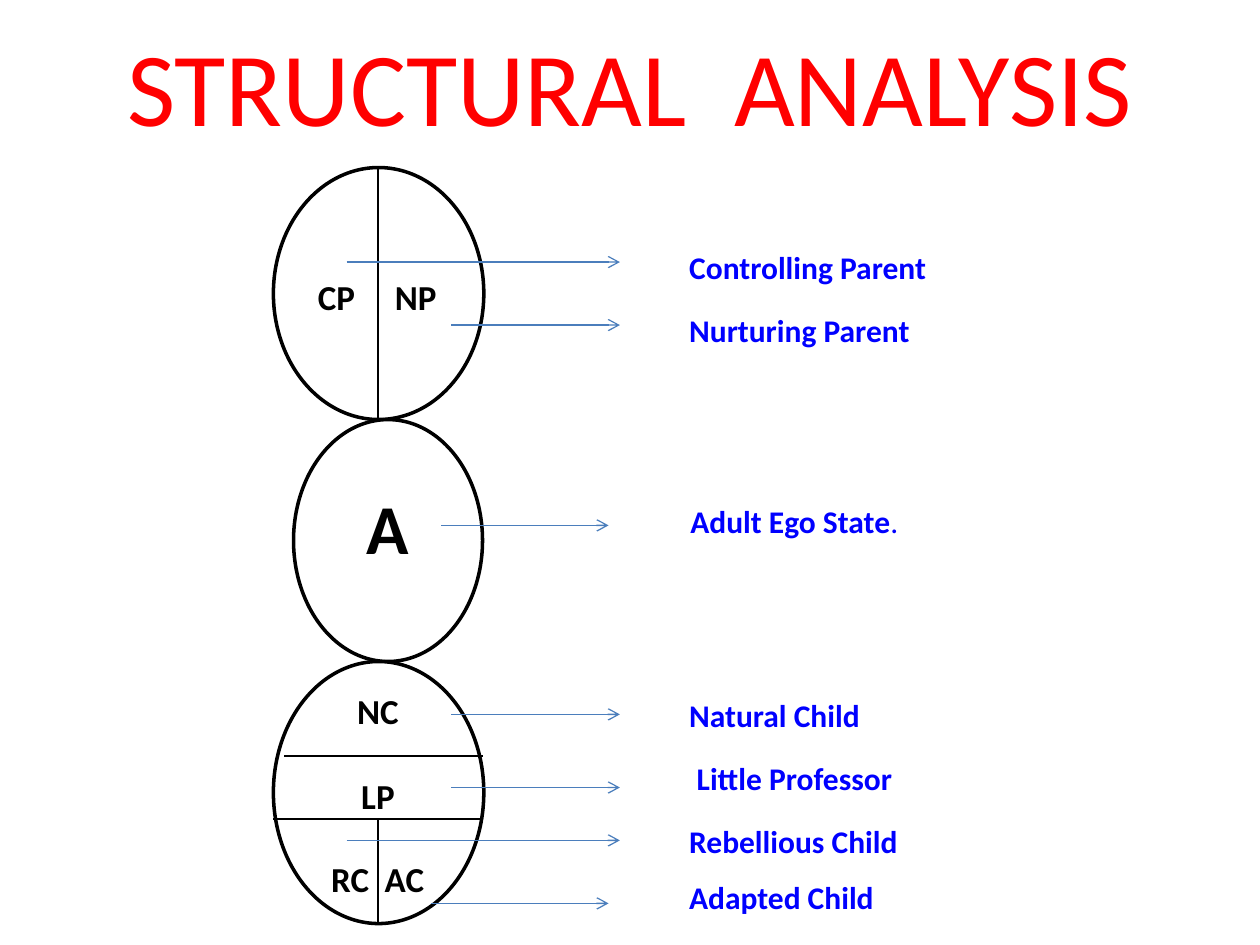
from dataclasses import dataclass

from pptx import Presentation
from pptx.dml.color import RGBColor
from pptx.enum.shapes import MSO_CONNECTOR, MSO_SHAPE
from pptx.enum.text import MSO_ANCHOR, PP_ALIGN
from pptx.oxml.ns import qn
from pptx.util import Inches, Pt
from lxml.etree import SubElement


@dataclass(frozen=True)
class Theme:
    font: str = "Calibri"
    title: str = "FF0000"
    label: str = "0000FF"
    ink: str = "000000"
    paper: str = "FFFFFF"
    arrow: str = "4B7EBC"
    title_size: int = 60
    adult_size: int = 40
    part_size: int = 20
    label_size: int = 18
    outline: float = 2
    thin: float = 0.75


THEME = Theme()

# left, top, width, height
EGO_STATES = [
    (2.17, 1.33, 1.67, 2),
    (2.33, 3.33, 1.5, 1.92),
    (2.17, 5.25, 1.67, 2.08),
]

# x1, y1, x2, y2
DIVIDERS = [
    (3, 1.33, 3, 3.33),
    (3.83, 6, 2.25, 6),
    (3.83, 6.5, 2.17, 6.5),
    (3, 6.5, 3, 7.33),
]

# text, centre x, centre y
PARTS = [
    ("CP", 2.67, 2.35),
    ("NP", 3.3, 2.35),
    ("NC", 3, 5.64),
    ("LP", 3, 6.31),
    ("RC", 2.78, 6.97),
    ("AC", 3.21, 6.97),
]

# text, left, centre y
LABELS = [
    ("Controlling Parent", 5.47, 2.12),
    ("Nurturing Parent", 5.47, 2.62),
    ("Adult Ego State", 5.48, 4.13),
    ("Natural Child", 5.47, 5.67),
    ("Little Professor", 5.53, 6.17),
    ("Rebellious Child", 5.47, 6.67),
    ("Adapted Child", 5.47, 7.12),
]

# start x, end x, y
ARROWS = [
    (2.75, 4.92, 2.08),
    (3.58, 4.92, 2.58),
    (3.5, 4.83, 4.17),
    (3.58, 4.92, 5.67),
    (3.58, 4.92, 6.25),
    (2.75, 4.92, 6.67),
    (3.42, 4.83, 7.17),
]


def rgb(value):
    return RGBColor.from_string(value)


def add_run(p, text, size, color, bold):
    r = p.add_run()
    r.text = text
    r.font.name = THEME.font
    r.font.size = Pt(size)
    r.font.bold = bold
    r.font.color.rgb = rgb(color)


def add_text(slide, text, left, middle, width, height, *, size,
             color=THEME.ink, bold=True, align=PP_ALIGN.CENTER):
    """Add a text box without margins, centred vertically on middle."""
    sp = slide.shapes.add_textbox(Inches(left), Inches(middle - height / 2),
                                  Inches(width), Inches(height))
    tf = sp.text_frame
    tf.word_wrap = True
    tf.vertical_anchor = MSO_ANCHOR.MIDDLE
    tf.margin_left = tf.margin_right = tf.margin_top = tf.margin_bottom = 0
    p = tf.paragraphs[0]
    p.alignment = align
    add_run(p, text, size, color, bold)
    return p


def add_ego_state(slide, left, top, width, height):
    sp = slide.shapes.add_shape(MSO_SHAPE.OVAL, Inches(left), Inches(top),
                                Inches(width), Inches(height))
    sp.shadow.inherit = False
    sp.fill.solid()
    sp.fill.fore_color.rgb = rgb(THEME.paper)
    sp.line.color.rgb = rgb(THEME.ink)
    sp.line.width = Pt(THEME.outline)


def add_line(slide, x1, y1, x2, y2, color=THEME.ink, arrow=False):
    line = slide.shapes.add_connector(MSO_CONNECTOR.STRAIGHT, Inches(x1),
                                      Inches(y1), Inches(x2), Inches(y2))
    line.line.color.rgb = rgb(color)
    line.line.width = Pt(THEME.thin)
    if arrow:
        SubElement(line.line._get_or_add_ln(), qn("a:tailEnd"), type="arrow")
    SubElement(line._element.spPr, qn("a:effectLst"))


def main():
    prs = Presentation()
    prs.slide_width, prs.slide_height = Inches(10), Inches(7.5)
    slide = prs.slides.add_slide(prs.slide_layouts[6])

    add_text(slide, "STRUCTURAL  ANALYSIS", 0.5, 0.67, 9, 1,
             size=THEME.title_size, color=THEME.title, bold=False)

    for oval in EGO_STATES:
        add_ego_state(slide, *oval)
    for divider in DIVIDERS:
        add_line(slide, *divider)

    add_text(slide, "A", 2.68, 4.18, 0.8, 0.7, size=THEME.adult_size)
    part_width = 0.5
    for text, center, middle in PARTS:
        add_text(slide, text, center - part_width / 2, middle, part_width, 0.35,
                 size=THEME.part_size)

    for text, left, middle in LABELS:
        p = add_text(slide, text, left, middle, 2.5, 0.32, size=THEME.label_size,
                     color=THEME.label, align=PP_ALIGN.LEFT)
        if text == "Adult Ego State":
            add_run(p, ".", THEME.label_size, THEME.label, bold=False)

    for start, end, y in ARROWS:
        add_line(slide, start, y, end, y, color=THEME.arrow, arrow=True)

    prs.save("out.pptx")


if __name__ == "__main__":
    main()
